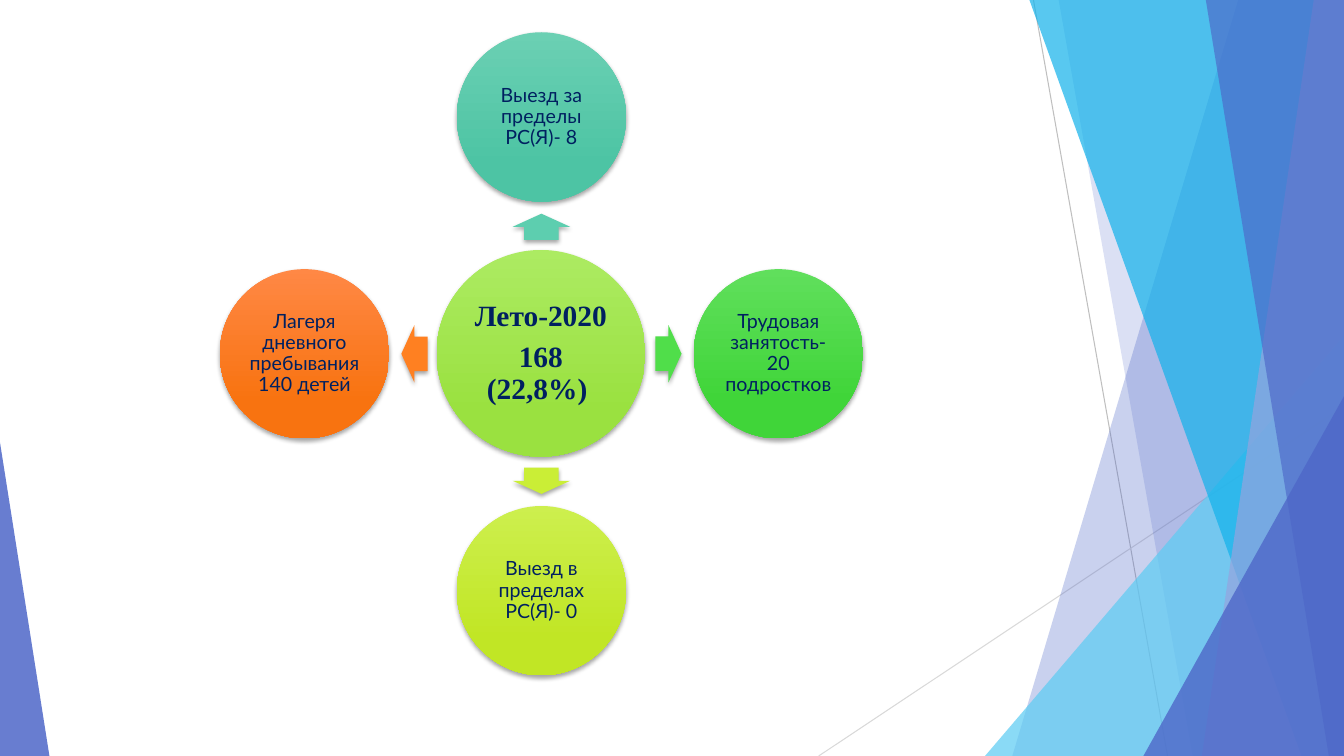
"""Build the summer 2020 slide: a hub circle with four satellites."""
from math import cos, radians, sin

from lxml.etree import SubElement
from pptx import Presentation
from pptx.dml.color import RGBColor as RGB
from pptx.enum.shapes import MSO_CONNECTOR as LINK, MSO_SHAPE as KIND
from pptx.enum.text import MSO_ANCHOR as ANCHOR, PP_ALIGN as ALIGN
from pptx.oxml.ns import qn
from pptx.util import Inches, Pt

THEME = {
    "ink": "002060", "blue": "4E67C8", "pale": "95A4DE", "sky": "5ECCF3", "cyan": "12B2EB",
    "hub": ("ACEB62", "9AE140"),
    "teal": ("6BD0B3", "4DC4A4", "5DCEAF"),
    "green": ("60DF5C", "40D539", "50DE4A"),
    "lime": ("CDEF4E", "C1E625", "CAEE36"),
    "orange": ("FF8845", "F87310", "FF8021"),
    "big": 21, "small": 14, "serif": "Times New Roman", "sans": "Lato",
}


def paint(shape, *tones, alpha=100, shade=False):
    shape.line.fill.background()
    shape.shadow.inherit = False
    fill = shape.fill
    if len(tones) == 2:
        fill.gradient()
        fill.gradient_angle = 270
        for stop, tone, spot in zip(fill.gradient_stops, tones, (0, 0.78)):
            stop.color.rgb = RGB.from_string(tone)
            stop.position = spot
    else:
        fill.solid()
        fill.fore_color.rgb = RGB.from_string(tones[0])
    props = shape._element.spPr
    if alpha < 100:
        color = props.find(qn("a:solidFill")).find(qn("a:srgbClr"))
        SubElement(color, qn("a:alpha"), val=str(alpha * 1000))
    if shade:
        drop = SubElement(props.find(qn("a:effectLst")), qn("a:outerShdw"),
                          blurRad=str(Pt(3)), dist=str(Pt(2)), dir="5400000", rotWithShape="0")
        color = SubElement(drop, qn("a:srgbClr"), val="000000")
        SubElement(color, qn("a:alpha"), val="35000")


def write(shape, text, size, font, bold=False, inset=0.02):
    frame = shape.text_frame
    frame.word_wrap = True
    frame.vertical_anchor = ANCHOR.MIDDLE
    frame.margin_left = frame.margin_right = Inches(inset)
    frame.margin_top = frame.margin_bottom = Inches(inset)
    frame.text = text
    for para in frame.paragraphs:
        para.alignment = ALIGN.CENTER
        para.line_spacing = 0.9
        para.space_after = Pt(round(size * 0.35))
        for run in para.runs:
            run.font.size = Pt(size)
            run.font.name = font
            run.font.bold = bold
            run.font.color.rgb = RGB.from_string(THEME["ink"])


deck = Presentation()
wide, high = 13.33, 7.5
deck.slide_width, deck.slide_height = Inches(wide), Inches(high)
slide = deck.slides.add_slide(deck.slide_layouts[6])
shapes = slide.shapes

for x1, y1, x2, y2, tone in [(10.25, 0, 11.58, high, "BFBFBF"),
                             (wide, 4.03, 8.12, high, "D9D9D9")]:
    line = shapes.add_connector(LINK.STRAIGHT, Inches(x1), Inches(y1), Inches(x2), Inches(y2))
    line.line.color.rgb = RGB.from_string(tone)
    line.line.width = Pt(0.75)
    SubElement(line._element.spPr, qn("a:effectLst"))

facets = [
    ("wedge", 12.28, 10.04, "blue", 30),
    ("wedge", 10.5, 11.83, "blue", 20),
    ("peak", 9.77, 3.33, "sky", 72),
    ("wedge", 10.21, 12.91, "cyan", 70),
    ("wedge", 13.03, 11.92, "pale", 70),
    ("wedge", 11.96, 13.18, "blue", 65),
    ("peak", 11.34, 3.93, "blue", 80),
]
for form, a, b, tone, alpha in facets:
    if form == "wedge":
        path = shapes.build_freeform(Inches(a), 0)
        path.add_line_segments([(Inches(x), Inches(y)) for x, y in
                                [(wide, 0), (wide, high), (b, high)]])
        facet = path.convert_to_shape()
    else:
        facet = shapes.add_shape(KIND.ISOSCELES_TRIANGLE, Inches(a), Inches(b),
                                 Inches(wide - a), Inches(high - b))
        facet.adjustments[0] = 1
    paint(facet, THEME[tone], alpha=alpha)

corner = shapes.add_shape(KIND.ISOSCELES_TRIANGLE, 0, Inches(4.39), Inches(0.49), Inches(3.11))
corner.adjustments[0] = 0
paint(corner, THEME["blue"], alpha=85)

mid_x, mid_y = 5.37, 3.51
hub = shapes.add_shape(KIND.OVAL, Inches(4.33), Inches(2.48), Inches(2.07), Inches(2.05))
paint(hub, *THEME["hub"], shade=True)
write(hub, "Лето-2020\n168 (22,8%) ", THEME["big"], THEME["serif"], bold=True, inset=0.03)

ring, reach, disc, long, broad = 2.35, 1.26, 1.68, 0.26, 0.57
moons = [
    (270, "teal", "Выезд за пределы РС(Я)- 8"),
    (0, "green", "Трудовая занятость- 20 подростков"),
    (90, "lime", "Выезд в пределах РС(Я)- 0"),
    (180, "orange", "Лагеря дневного пребывания 140 детей"),
]
for turn, tone, text in moons:
    dx, dy = cos(radians(turn)), sin(radians(turn))
    top, base, flat = THEME[tone]
    arrow = shapes.add_shape(KIND.RIGHT_ARROW, Inches(mid_x + reach * dx - long / 2),
                             Inches(mid_y + reach * dy - broad / 2), Inches(long), Inches(broad))
    arrow.adjustments[0] = 0.6
    arrow.rotation = turn
    paint(arrow, flat, shade=True)
    moon = shapes.add_shape(KIND.OVAL, Inches(mid_x + ring * dx - disc / 2),
                            Inches(mid_y + ring * dy - disc / 2), Inches(disc), Inches(disc))
    paint(moon, top, base, shade=True)
    write(moon, text, THEME["small"], THEME["sans"])

deck.save("out.pptx")
